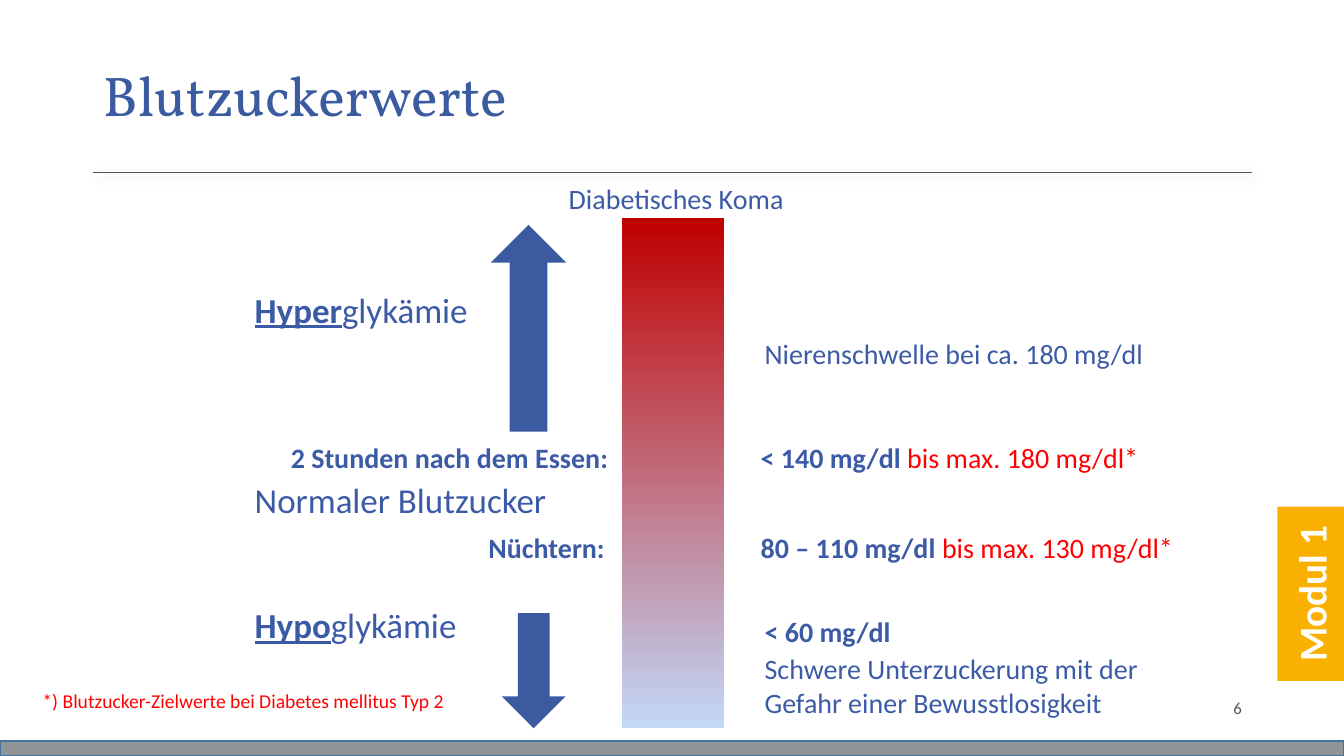
from lxml import etree
from pptx import Presentation
from pptx.dml.color import RGBColor
from pptx.enum.shapes import MSO_CONNECTOR, MSO_SHAPE
from pptx.enum.text import MSO_ANCHOR as Anchor, MSO_AUTO_SIZE as AutoSize, PP_ALIGN as Align
from pptx.oxml import parse_xml
from pptx.oxml.ns import nsdecls, qn
from pptx.util import Cm, Pt

COLORS = {
    "title": "3B5BA1", "text": "3C5BA6", "target": "FF0000", "grey": "575756",
    "footer": "909698", "footer_edge": "43739E", "module": "F9B000",
    "white": "FFFFFF", "high": "C00000", "low": "C2D8F8",
}
INSET = 0.25


def color(name):
    """Return the named colour."""
    return RGBColor.from_string(COLORS[name])


def place(box, left, top, width, height):
    """Return lengths for a part offset from the corner of a region."""
    return Cm(box[0] + left), Cm(box[1] + top), Cm(width), Cm(height)


def write(frame, *spans, size=20, ink="text", font="Calibri", align=Align.LEFT,
          anchor=Anchor.TOP, grow=False, inset=None, spacing=None, tab=None):
    """Fill a text frame with spans given as text or (text, font settings)."""
    frame.word_wrap = True
    frame.auto_size = AutoSize.SHAPE_TO_FIT_TEXT if grow else AutoSize.NONE
    frame.vertical_anchor = anchor
    if inset is not None:
        frame.margin_left = frame.margin_right = Cm(inset)
        frame.margin_top = frame.margin_bottom = Cm(inset)
    para = frame.paragraphs[0]
    if tab:
        stops = etree.SubElement(para._p.get_or_add_pPr(), qn("a:tabLst"))
        etree.SubElement(stops, qn("a:tab"), pos=str(Cm(tab)), algn="l")
    para.alignment = align
    para.line_spacing = spacing
    for item in spans:
        text, settings = (item, {}) if isinstance(item, str) else item
        span = para.add_run()
        span.text = text
        span.font.name, span.font.size = font, Pt(size)
        span.font.color.rgb = color(settings.get("ink", ink))
        span.font.bold = settings.get("bold", False)
        span.font.underline = settings.get("underline", False)


def add_text(page, area, *spans, **settings):
    """Add a text box."""
    write(page.shapes.add_textbox(*area).text_frame, *spans, **settings)


def add_block(page, kind, area, fill=None):
    """Add a flat preset shape without outline."""
    block = page.shapes.add_shape(kind, *area)
    block.shadow.inherit = False
    block.line.fill.background()
    if fill:
        block.fill.solid()
        block.fill.fore_color.rgb = color(fill)
    return block


def add_header(page, box):
    """Set the title above a softly shadowed rule."""
    left, top, width, height = box
    title = page.shapes.title
    title.left, title.top, title.width, title.height = place(box, 0, 0, 22, 3)
    write(title.text_frame, "Blutzuckerwerte", size=40, ink="title",
          font="Vollkorn", anchor=Anchor.MIDDLE, spacing=0.9)
    rule = page.shapes.add_connector(
        MSO_CONNECTOR.STRAIGHT, Cm(left), Cm(top + height), Cm(left + width), Cm(top + height))
    rule.line.color.rgb = color("grey")
    rule.line.width = Pt(0.5)
    rule._element.spPr.append(parse_xml(
        f'<a:effectLst {nsdecls("a")}><a:outerShdw blurRad="{Pt(7)}" dist="{Pt(3)}" '
        f'dir="2700000"><a:srgbClr val="{COLORS["grey"]}"><a:alpha val="50000"/>'
        '</a:srgbClr></a:outerShdw></a:effectLst>'))


def add_scale(page, box):
    """Draw the blood sugar bar with its arrows, states and values."""
    bar = add_block(page, MSO_SHAPE.RECTANGLE, place(box, 9.5, 1.04, 2.59, 12.85))
    bar.fill.gradient()
    bar.fill.gradient_angle = 270
    for stop, name, position in zip(bar.fill.gradient_stops, ("high", "low"), (0, 1)):
        stop.color.rgb = color(name)
        stop.position = position
    add_block(page, MSO_SHAPE.UP_ARROW, place(box, 6.2, 1.22, 1.9, 5.21), "title")
    add_block(page, MSO_SHAPE.DOWN_ARROW, place(box, 6.48, 11, 1.6, 2.9), "title")
    add_text(page, place(box, 7.67, 0, 6.4, 1.12), "Diabetisches Koma",
             align=Align.CENTER, grow=True)

    bold, stressed = {"bold": True}, {"bold": True, "underline": True}
    for top, width, spans in (
        (2.69, 6.35, (("Hyper", stressed), "glykämie")),
        (7.49, 9.04, ("Normaler Blutzucker",)),
        (10.64, 7.21, (("Hypo", stressed), "glykämie")),
    ):
        add_text(page, place(box, 0, top, width, 1.32), *spans, size=25, grow=True)

    value_left = 13
    for left, top, width, label, value, limit in (
        (0.91, 6.53, 22.48, "2 Stunden nach dem Essen:", "< 140 mg/dl ", "bis max. 180 mg/dl*"),
        (5.89, 8.79, 17.91, "Nüchtern:", "80 – 110 mg/dl ", "bis max. 130 mg/dl*"),
    ):
        add_text(page, place(box, left, top, width, 1.12), (f"{label}\t{value}", bold),
                 (limit, {"ink": "target"}), tab=value_left - left - INSET, grow=True)

    for top, width, height, span in (
        (3.91, 12.93, 1.12, "Nierenschwelle bei ca. 180 mg/dl"),
        (10.92, 5.08, 1.12, ("< 60 mg/dl", bold)),
        (11.84, 10.52, 1.96, "Schwere Unterzuckerung mit der Gefahr einer Bewusstlosigkeit"),
    ):
        add_text(page, place(box, 12.85, top, width, height), span, grow=True)


def add_footer(page, box):
    """Add the footnote, the page number and the bottom strip."""
    add_text(page, place(box, 1.07, 0.1, 10.19, 0.81),
             "*) Blutzucker-Zielwerte bei Diabetes mellitus Typ 2",
             size=14, ink="target", inset=0, spacing=0.9)
    add_text(page, place(box, 23.93, 0, 7.62, 1.02), "6", size=12, ink="grey",
             align=Align.RIGHT, anchor=Anchor.MIDDLE)
    height = 0.38
    strip = add_block(page, MSO_SHAPE.RECTANGLE,
                      place(box, 0, box[3] - height, box[2], height), "footer")
    strip.line.color.rgb = color("footer_edge")
    strip.line.width = Pt(1)


def add_module_tab(page, box):
    """Add the upright module label at the right edge."""
    label = add_block(page, MSO_SHAPE.RECTANGLE, place(box, 0, 0, box[2], box[3]), "module")
    label.rotation = 270
    write(label.text_frame, ("Modul 1", {"bold": True}), size=28, ink="white",
          align=Align.CENTER, anchor=Anchor.MIDDLE)


def main():
    """Build and save the deck."""
    deck = Presentation()
    deck.slide_width, deck.slide_height = Cm(33.87), Cm(19.05)
    page = deck.slides.add_slide(deck.slide_layouts[5])
    add_header(page, (2.34, 0.99, 29.21, 3.35))
    add_scale(page, (6.17, 4.45, 25.78, 13.9))
    add_footer(page, (0, 17.32, 33.87, 1.73))
    add_module_tab(page, (30.84, 14.12, 4.39, 1.68))
    deck.save("out.pptx")


if __name__ == "__main__":
    main()
